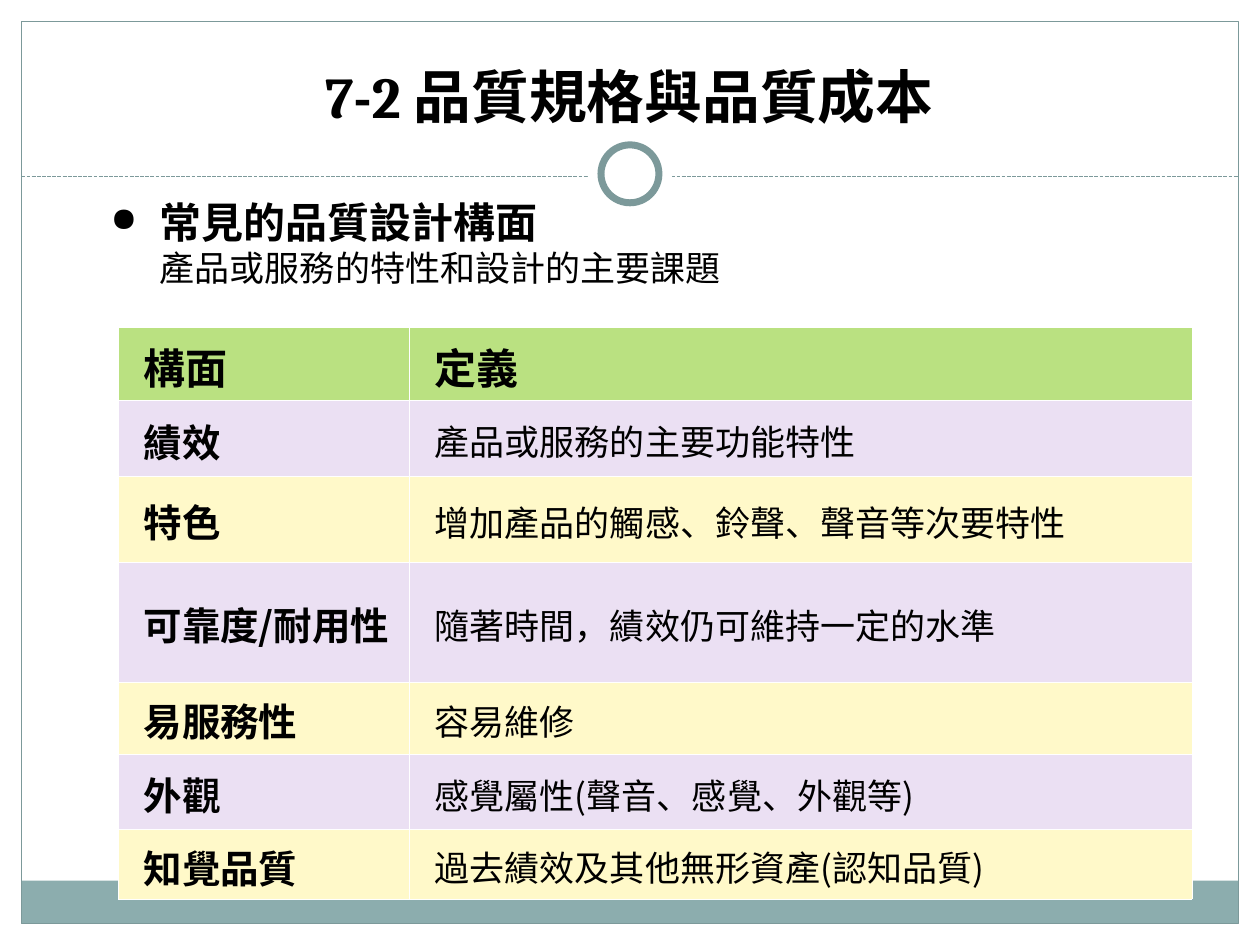
"""Build the slide on quality specification and quality cost."""
from lxml.etree import SubElement
from pptx import Presentation
from pptx.dml.color import RGBColor
from pptx.enum.dml import MSO_LINE
from pptx.enum.shapes import MSO_CONNECTOR, MSO_SHAPE
from pptx.enum.text import MSO_ANCHOR, PP_ALIGN
from pptx.oxml import parse_xml
from pptx.oxml.ns import nsdecls, qn
from pptx.util import Inches, Pt

BLACK = RGBColor(0x00, 0x00, 0x00)
WHITE = RGBColor(0xFF, 0xFF, 0xFF)
TEAL = RGBColor(0x7C, 0x99, 0x9A)
BAND = RGBColor(0x8C, 0xAD, 0xAE)
GREEN = RGBColor(0xBA, 0xE1, 0x81)
LILAC = RGBColor(0xEB, 0xE0, 0xF3)
CREAM = RGBColor(0xFF, 0xF9, 0xC9)
SANS = "Noto Sans CJK SC"

HEADING = {"name": SANS, "size": Pt(24), "bold": True}
LABEL = {"name": SANS, "size": Pt(22), "bold": True}
BODY = {"name": SANS, "size": Pt(20), "bold": False}
TITLE = {"name": "Cambria", "size": Pt(33), "bold": True}

ROWS = [
    ("構面", "定義", 0.58),
    ("績效", "產品或服務的主要功能特性", 0.6),
    ("特色", "增加產品的觸感、鈴聲、聲音等次要特性", 0.68),
    ("可靠度/耐用性", "隨著時間，績效仍可維持一定的水準", 0.73),
    ("易服務性", "容易維修", 0.57),
    ("外觀", "感覺屬性(聲音、感覺、外觀等)", 0.6),
    ("知覺品質", "過去績效及其他無形資產(認知品質)", 0.55),
]
COLUMNS = [2.31, 6.21]

deck = Presentation()
deck.slide_width, deck.slide_height = Inches(10), Inches(7.5)
page = deck.slides.add_slide(deck.slide_layouts[6])
middle = deck.slide_width // 2
margin = Inches(0.17)
right = deck.slide_width - margin
rule_top = Inches(1.4)


def write(para, text, style):
    span = para.add_run()
    span.text = text
    for name, value in style.items():
        setattr(span.font, name, value)
    span.font.color.rgb = BLACK
    SubElement(span.font._element, qn("a:ea")).set("typeface", SANS)


def add_figure(kind, left, top, width, height, fill, line_width):
    figure = page.shapes.add_shape(kind, left, top, width, height)
    figure.shadow.inherit = False
    if fill is None:
        figure.fill.background()
    else:
        figure.fill.solid()
        figure.fill.fore_color.rgb = fill
    if line_width:
        figure.line.color.rgb = TEAL
        figure.line.width = Pt(line_width)
    else:
        figure.line.fill.background()


frame_width = right - margin
frame_height = deck.slide_height - 2 * margin
band_height = Inches(0.34)
band_top = margin + frame_height - band_height
add_figure(MSO_SHAPE.RECTANGLE, margin, band_top, frame_width, band_height, BAND, 0)
add_figure(MSO_SHAPE.RECTANGLE, margin, margin, frame_width, frame_height, None, 0.75)

rule = page.shapes.add_connector(MSO_CONNECTOR.STRAIGHT, margin, rule_top, right, rule_top)
rule.line.color.rgb = TEAL
rule.line.width = Pt(0.75)
rule.line.dash_style = MSO_LINE.SQUARE_DOT
SubElement(rule._element.spPr, qn("a:effectLst"))

for diameter, line_width in ((0.67, 0), (0.46, 4)):
    size = Inches(diameter)
    top = Inches(1.38) - size // 2
    add_figure(MSO_SHAPE.OVAL, middle - size // 2, top, size, size, WHITE, line_width)

table_frame = page.shapes.add_table(
    len(ROWS), len(COLUMNS), Inches(0.94), Inches(2.6),
    Inches(sum(COLUMNS)), Inches(sum(row[-1] for row in ROWS)))
table = table_frame.table
for column, width in zip(table.columns, COLUMNS):
    column.width = Inches(width)
for row_index, (label, definition, height) in enumerate(ROWS):
    table.rows[row_index].height = Inches(height)
    fill = GREEN if row_index == 0 else (CREAM, LILAC)[row_index % 2]
    styles = (HEADING, HEADING) if row_index == 0 else (LABEL, BODY)
    for column_index, text in enumerate((label, definition)):
        cell = table.cell(row_index, column_index)
        layout = {
            "margin_left": Inches(0.2),
            "margin_right": Inches((0.04, 0)[column_index]),
            "margin_top": 0,
            "margin_bottom": 0,
            "vertical_anchor": MSO_ANCHOR.MIDDLE,
        }
        for name, value in layout.items():
            setattr(cell, name, value)
        cell.fill.solid()
        cell.fill.fore_color.rgb = fill
        for position, side in enumerate("LRTB"):
            border = parse_xml(
                f'<a:ln{side} {nsdecls("a")} w="{Pt(0.25)}"><a:solidFill>'
                f'<a:srgbClr val="{WHITE}"/></a:solidFill></a:ln{side}>')
            cell._tc.tcPr.insert(position, border)
        para = cell.text_frame.paragraphs[0]
        para.line_spacing = 1.08
        write(para, text, styles[column_index])

box = page.shapes.add_textbox(Inches(0.78), Inches(1.51), Inches(7.64), Inches(0.91))
box.text_frame.word_wrap = True
topic = box.text_frame.paragraphs[0]
write(topic, "常見的品質設計構面", HEADING)
detail = box.text_frame.add_paragraph()
write(detail, "產品或服務的特性和設計的主要課題", BODY)
for para, indent in ((topic, -0.39), (detail, 0)):
    properties = para._p.get_or_add_pPr()
    properties.set("marL", str(Inches(0.39)))
    properties.set("indent", str(Inches(indent)))
bullet = topic._p.get_or_add_pPr()
SubElement(bullet, qn("a:buSzPct")).set("val", "80000")
SubElement(bullet, qn("a:buChar")).set("char", "●")

title = page.shapes.add_textbox(Inches(0.33), Inches(0.25), Inches(9.33), Inches(0.83))
title.text_frame.word_wrap = True
title.text_frame.vertical_anchor = MSO_ANCHOR.BOTTOM
title.text_frame.paragraphs[0].alignment = PP_ALIGN.CENTER
write(title.text_frame.paragraphs[0], "7-2 品質規格與品質成本", TITLE)

deck.save("out.pptx")
